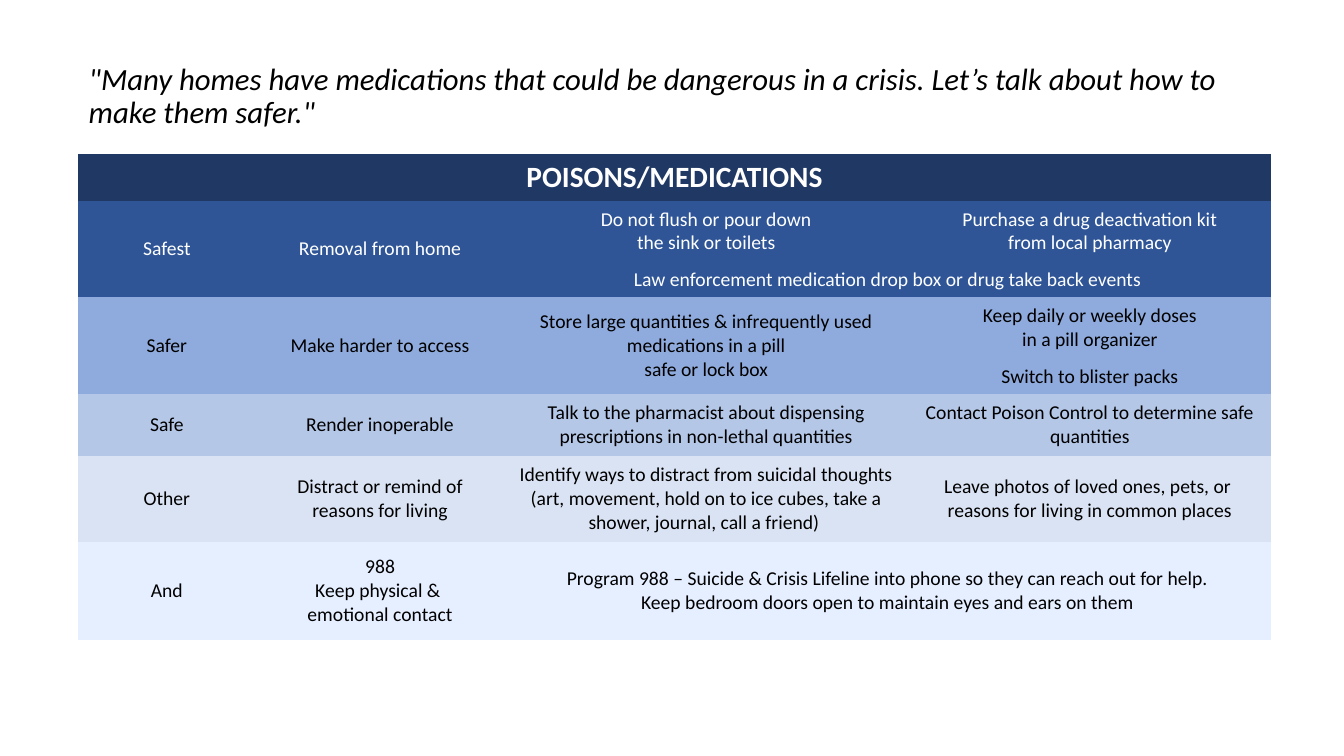
from lxml.etree import SubElement
from pptx import Presentation
from pptx.dml.color import RGBColor
from pptx.enum.text import MSO_ANCHOR as Anchor, PP_ALIGN as Align
from pptx.oxml.ns import qn
from pptx.util import Inches, Pt

BLACK = RGBColor(0x00, 0x00, 0x00)
WHITE = RGBColor(0xFF, 0xFF, 0xFF)
NAVY = RGBColor(0x20, 0x38, 0x64)
BLUE = RGBColor(0x2F, 0x55, 0x97)
MID_BLUE = RGBColor(0x8F, 0xAA, 0xDC)
LIGHT_BLUE = RGBColor(0xB4, 0xC7, 0xE7)
PALE_BLUE = RGBColor(0xDA, 0xE3, 0xF3)
ICE_BLUE = RGBColor(0xE6, 0xEF, 0xFF)

PLAIN_TABLE = "{2D5ABB26-0587-4C30-8999-92F81FD0307C}"
COLUMN_WIDTHS = [1.77, 2.46, 4.01, 3.6]
ROW_HEIGHTS = [0.47, 0.61, 0.35, 0.61, 0.35, 0.61, 0.86, 0.97]
ROW_FILLS = [NAVY, BLUE, BLUE, MID_BLUE, MID_BLUE, LIGHT_BLUE, PALE_BLUE, ICE_BLUE]
WHITE_TEXT_ROWS = 3

QUOTE = ("\"Many homes have medications that could be dangerous in a crisis. "
         "Let’s talk about how to make them safer.\" ")

# (row, column): paragraphs
CELL_TEXTS = {
    (0, 0): ["POISONS/MEDICATIONS"],
    (1, 0): ["Safest"],
    (1, 1): ["Removal from home"],
    (1, 2): ["Do not flush or pour down", "the sink or toilets"],
    (1, 3): ["Purchase a drug deactivation kit", "from local pharmacy"],
    (2, 2): ["Law enforcement medication drop box or drug take back events"],
    (3, 0): ["Safer"],
    (3, 1): ["Make harder to access"],
    (3, 2): ["Store large quantities & infrequently used medications in a pill",
             "safe or lock box"],
    (3, 3): ["Keep daily or weekly doses", "in a pill organizer"],
    (4, 3): ["Switch to blister packs"],
    (5, 0): ["Safe"],
    (5, 1): ["Render inoperable"],
    (5, 2): ["Talk to the pharmacist about dispensing prescriptions "
             "in non-lethal quantities"],
    (5, 3): ["Contact Poison Control to determine safe quantities"],
    (6, 0): ["Other"],
    (6, 1): ["Distract or remind of reasons for living"],
    (6, 2): ["Identify ways to distract from suicidal thoughts (art, movement, "
             "hold on to ice cubes, take a shower, journal, call a friend) "],
    (6, 3): ["Leave photos of loved ones, pets, or ",
             "reasons for living in common places"],
    (7, 0): ["And"],
    (7, 1): ["988", "Keep physical & ", "emotional contact"],
    (7, 2): ["Program 988 – Suicide & Crisis Lifeline into phone "
             "so they can reach out for help.",
             "Keep bedroom doors open to maintain eyes and ears on them"],
}

# First and last cell of each merged block
MERGES = [((0, 0), (0, 3)), ((1, 0), (2, 0)), ((1, 1), (2, 1)), ((2, 2), (2, 3)),
          ((3, 0), (4, 0)), ((3, 1), (4, 1)), ((3, 2), (4, 2)), ((7, 2), (7, 3))]


class SlideBuilder:
    font = "Calibri"

    def __init__(self, deck):
        self.page = deck.slides.add_slide(deck.slide_layouts[5])

    def fill_text(self, frame, texts, align, color, **font_values):
        values = {"name": self.font, **font_values}
        for index, text in enumerate(texts):
            para = frame.paragraphs[0] if index == 0 else frame.add_paragraph()
            para.alignment = align
            span = para.add_run()
            span.text = text
            span.font.color.rgb = color
            for name, value in values.items():
                setattr(span.font, name, value)

    def title(self, text, left, top, width, height):
        box = self.page.shapes.title
        box.left, box.top = Inches(left), Inches(top)
        box.width, box.height = Inches(width), Inches(height)
        frame = box.text_frame
        frame.word_wrap = True
        frame.vertical_anchor = Anchor.MIDDLE
        self.fill_text(frame, [text], Align.LEFT, BLACK, size=Pt(22), italic=True)
        frame.paragraphs[0].line_spacing = 0.9

    def table(self, left, top):
        frame = self.page.shapes.add_table(
            len(ROW_HEIGHTS), len(COLUMN_WIDTHS), Inches(left), Inches(top),
            Inches(sum(COLUMN_WIDTHS)), Inches(sum(ROW_HEIGHTS)))
        grid = frame.table
        grid.first_row = grid.horz_banding = False
        grid._tbl.tblPr.find(qn("a:tableStyleId")).text = PLAIN_TABLE
        for column, width in zip(grid.columns, COLUMN_WIDTHS):
            column.width = Inches(width)
        for row, height in zip(grid.rows, ROW_HEIGHTS):
            row.height = Inches(height)
        return grid

    def cell(self, cell, texts, color, size=14, bold=False, anchor=Anchor.MIDDLE):
        cell.vertical_anchor = anchor
        self.fill_text(cell.text_frame, texts, Align.CENTER, color,
                       size=Pt(size), bold=bold)

    def borders(self, cell, sides, color):
        properties = cell._tc.get_or_add_tcPr()
        for index, side in enumerate(sides):
            line = SubElement(properties, qn(f"a:ln{side}"), w=str(Pt(1)))
            fill = SubElement(line, qn("a:solidFill"))
            SubElement(fill, qn("a:srgbClr"), val=str(color))
            properties.insert(index, line)


def main():
    deck = Presentation()
    deck.slide_width, deck.slide_height = Inches(13.33), Inches(7.5)
    slide = SlideBuilder(deck)

    # Opening quote
    slide.title(QUOTE, 0.78, 0.4, 11.86, 1.13)

    # Safety table: row colours, then merged blocks, then text
    grid = slide.table(0.77, 1.52)
    for row, color in zip(grid.rows, ROW_FILLS):
        for cell in row.cells:
            cell.fill.solid()
            cell.fill.fore_color.rgb = color
    for first, last in MERGES:
        grid.cell(*first).merge(grid.cell(*last))
    for (row, column), texts in CELL_TEXTS.items():
        header = {"size": 21, "bold": True, "anchor": Anchor.BOTTOM} if row == 0 else {}
        color = WHITE if row < WHITE_TEXT_ROWS else BLACK
        slide.cell(grid.cell(row, column), texts, color, **header)
    slide.borders(grid.cell(0, 0), "LRT", WHITE)

    deck.save("out.pptx")


if __name__ == "__main__":
    main()
